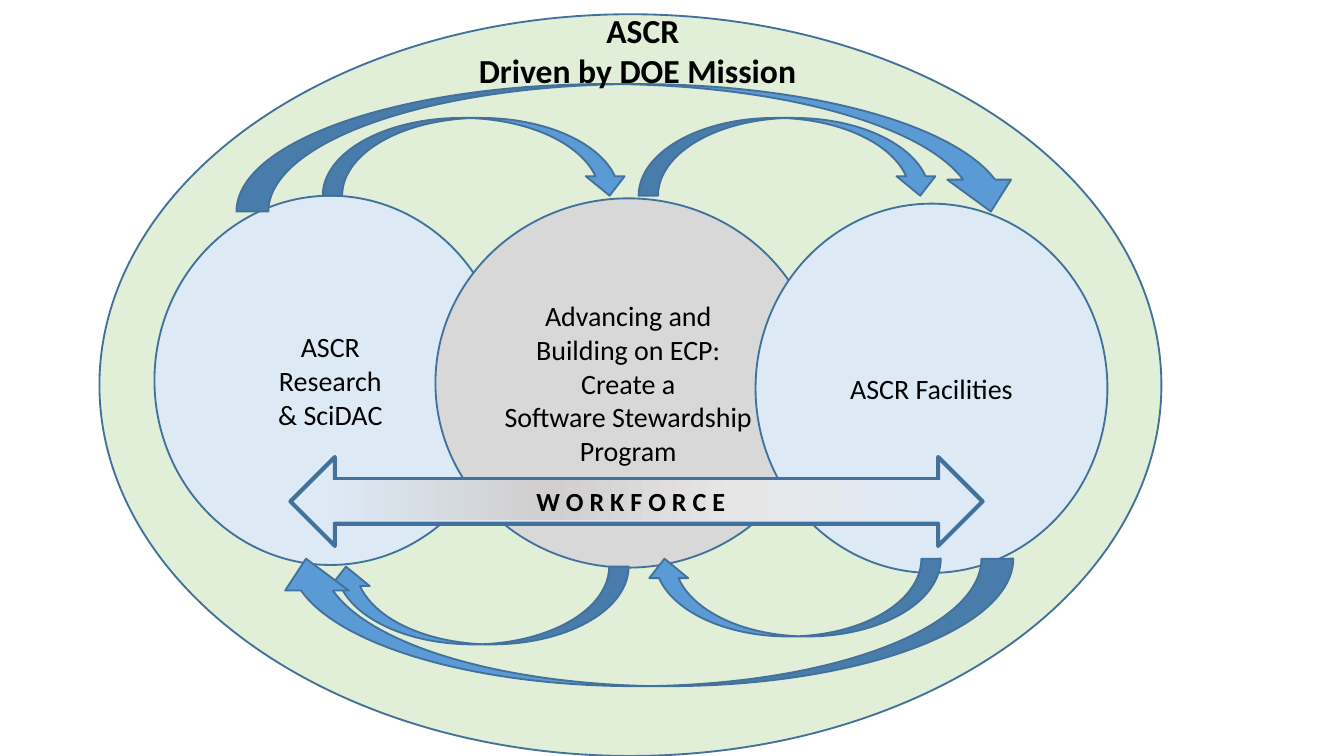
from lxml import etree
from pptx import Presentation
from pptx.dml.color import RGBColor
from pptx.enum.shapes import MSO_SHAPE
from pptx.enum.text import MSO_ANCHOR, PP_ALIGN
from pptx.oxml.ns import qn
from pptx.util import Cm, Pt

OUTLINE = "42719B"
PALE_BLUE = "DDEAF6"
ARROW_BLUE = "5B9BD5"


def color(hex_code):
    return RGBColor.from_string(hex_code)


def add_shape(page, kind, box, fill, line_width=1):
    """Add a flat shape; box is left, top, width, height in cm."""
    shape = page.shapes.add_shape(kind, *map(Cm, box))
    shape.shadow.inherit = False
    if fill:
        shape.fill.solid()
        shape.fill.fore_color.rgb = color(fill)
    if line_width:
        shape.line.color.rgb = color(OUTLINE)
        shape.line.width = Pt(line_width)
    else:
        shape.line.fill.background()
    return shape


def set_text(shape, text, size, bold=False, anchor=MSO_ANCHOR.MIDDLE):
    frame = shape.text_frame
    frame.word_wrap = True
    frame.vertical_anchor = anchor
    frame.margin_left = frame.margin_right = Cm(0.19)
    frame.margin_top = frame.margin_bottom = Cm(0.1)
    frame.text = text
    for para in frame.paragraphs:
        para.alignment = PP_ALIGN.CENTER
        for span in para.runs:
            span.font.name = "Calibri"
            span.font.size = Pt(size)
            span.font.bold = bold
            span.font.color.rgb = color("000000")


def set_gradient(shape, stops):
    """Fill a shape from left to right; stops are (percent, colour)."""
    gradient = etree.Element(qn("a:gradFill"), rotWithShape="1")
    stop_list = etree.SubElement(gradient, qn("a:gsLst"))
    for percent, hex_code in stops:
        stop = etree.SubElement(stop_list, qn("a:gs"), pos=str(percent * 1000))
        etree.SubElement(stop, qn("a:srgbClr"), val=hex_code)
    etree.SubElement(gradient, qn("a:lin"), ang="0", scaled="0")
    shape.element.spPr.find(qn("a:prstGeom")).addnext(gradient)


def add_mission(page, box):
    """Mission ellipse with its three overlapping areas and the arrows."""
    left, top = box[:2]
    add_shape(page, MSO_SHAPE.OVAL, box, "E1EFD8")

    # Areas
    areas = [
        (1.04, 3.43, 6.65, PALE_BLUE, "ASCR\nResearch\n& SciDAC"),
        (6.35, 3.48, 7.29, "D8D8D8",
         "Advancing and Building on ECP:\nCreate a\nSoftware Stewardship Program"),
        (12.4, 3.58, 6.65, PALE_BLUE, "ASCR Facilities"),
    ]
    for x, y, width, fill, text in areas:
        area = add_shape(page, MSO_SHAPE.OVAL, (left + x, top + y, width, 6.98), fill)
        set_text(area, text, 15)

    # Arrows: forward above the areas, turned around below them
    arrows = [
        (4.22, 1.96, 5.79, 1.47, 0),
        (4.29, 10.44, 5.71, 1.47, 180),
        (10.19, 1.96, 5.69, 1.47, 0),
        (10.31, 10.29, 5.59, 1.47, 180),
        (2.59, 1.32, 14.86, 2.41, 0),
        (3.3, 10.29, 13.97, 2.41, 180),
    ]
    for x, y, width, height, turn in arrows:
        arrow = add_shape(page, MSO_SHAPE.CURVED_DOWN_ARROW,
                          (left + x, top + y, width, height), ARROW_BLUE)
        arrow.rotation = turn


def add_title(page, box):
    title = page.shapes.add_textbox(*map(Cm, box))
    set_text(title, "ASCR\nDriven by DOE Mission", 18, True, MSO_ANCHOR.TOP)
    title.text_frame.paragraphs[1].alignment = PP_ALIGN.LEFT


def add_workforce(page, box):
    """Double arrow with a gradient label along its shaft."""
    left, top, width, height = box
    add_shape(page, MSO_SHAPE.LEFT_RIGHT_ARROW, box, PALE_BLUE, 2.25)
    label = add_shape(page, MSO_SHAPE.RECTANGLE,
                      (left + 0.53, top + 0.44, width - 1.27, height - 0.92), None, 0)
    set_gradient(label, [(0, PALE_BLUE), (37, "D0CECE"), (67, "E7E6E6"), (100, PALE_BLUE)])
    set_text(label, "W O R K F O R C E", 14, True, MSO_ANCHOR.TOP)


def main():
    deck = Presentation()
    deck.slide_width, deck.slide_height = Cm(25.4), Cm(14.29)
    page = deck.slides.add_slide(deck.slide_layouts[6])
    add_mission(page, (1.88, 0.27, 20.07, 14.02))
    add_title(page, (8.86, 0.08, 6.58, 1.73))
    add_workforce(page, (5.49, 8.64, 13.08, 1.68))
    deck.save("out.pptx")


if __name__ == "__main__":
    main()
